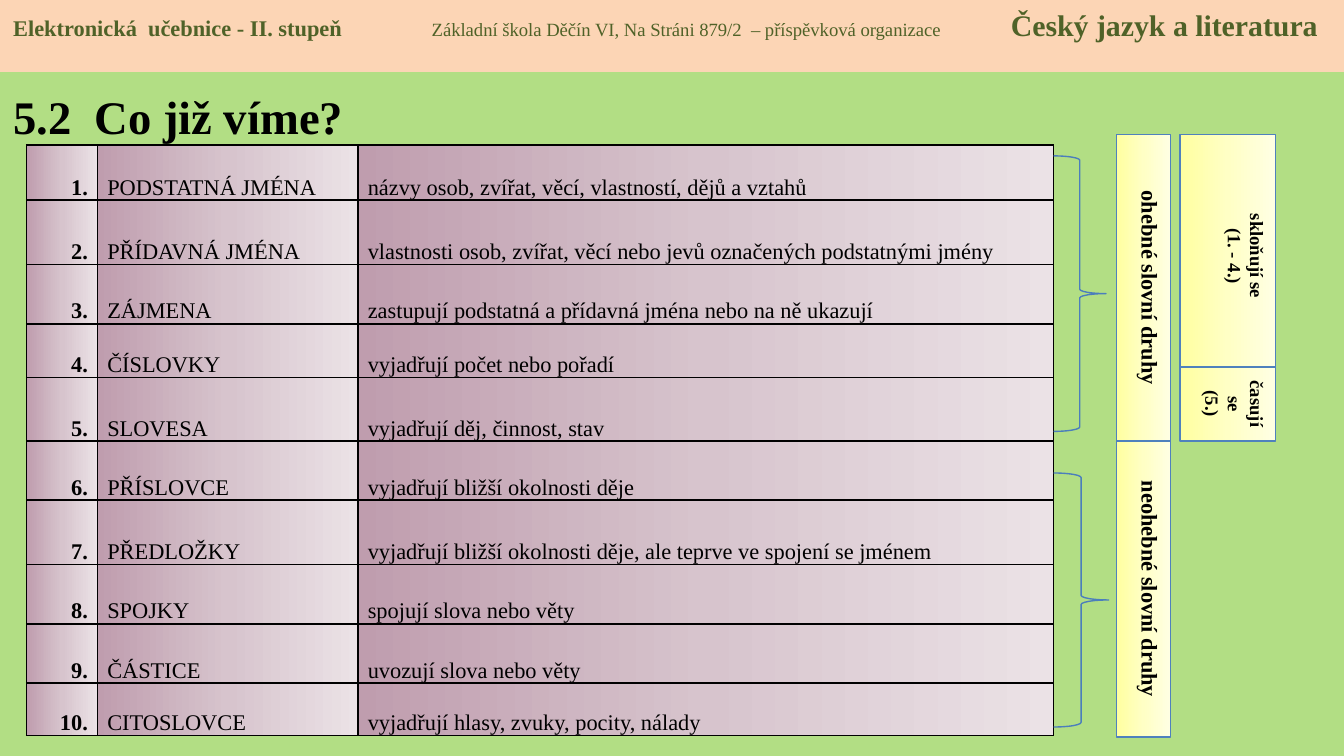
import copy

import pptx
import pptx.dml.color
import pptx.enum.shapes
import pptx.enum.text
import pptx.oxml
import pptx.oxml.ns
import pptx.util
from lxml import etree

Pt = pptx.util.Pt
PRESET = pptx.enum.shapes.MSO_SHAPE
ALIGN = pptx.enum.text.PP_ALIGN
ANCHOR = pptx.enum.text.MSO_ANCHOR
AUTO_SIZE = pptx.enum.text.MSO_AUTO_SIZE
qn = pptx.oxml.ns.qn

# Content
HEADING = "5.2  Co již víme?"
BANNER = [  # text, size, bold, start measured from the banner's text edge
    ("Elektronická  učebnice - II. stupeň", 12, True, 0),
    ("Základní škola Děčín VI, Na Stráni 879/2  – příspěvková organizace", 10, False, 224.2),
    ("Český jazyk a literatura", 16, True, 534.5),
]
WORD_CLASSES = [  # name, meaning, row height
    ("PODSTATNÁ JMÉNA", "názvy osob, zvířat, věcí, vlastností, dějů a vztahů", 29.5),
    ("PŘÍDAVNÁ JMÉNA", "vlastnosti osob, zvířat, věcí nebo jevů označených podstatnými jmény", 34.4),
    ("ZÁJMENA", "zastupují podstatná a přídavná jména nebo na ně ukazují", 31.8),
    ("ČÍSLOVKY", "vyjadřují počet nebo pořadí", 28.8),
    ("SLOVESA", "vyjadřují děj, činnost, stav", 34),
    ("PŘÍSLOVCE", "vyjadřují bližší okolnosti děje", 31.8),
    ("PŘEDLOŽKY", "vyjadřují bližší okolnosti děje, ale teprve ve spojení se jménem", 34.4),
    ("SPOJKY", "spojují slova nebo věty", 31.8),
    ("ČÁSTICE", "uvozují slova nebo věty", 31.8),
    ("CITOSLOVCE", "vyjadřují hlasy, zvuky, pocity, nálady", 28.1),
]
GROUPS = [  # text, size, left, top, width, height
    ("ohebné slovní druhy", 12, 598.3, 72, 28.8, 164.2),
    ("neohebné slovní druhy", 12, 598.3, 236.2, 28.8, 158.6),
    ("skloňují se\n(1. - 4.)", 10, 632.2, 72, 51.1, 130.3),
    ("časují se\n(5.)", 10, 632.2, 196.6, 51.1, 39.6),
]
BRACES = [(83.5, 28.1, 147.6), (253.4, 29.5, 136.1)]  # top, width, height

COLORS = {
    "page": "92D050", "banner": "FCD5B5", "banner_text": "4F6228",
    "text": "000000", "group_line": "4F81BD", "brace": "4B7EBC",
}
CELL_SHADES = ("BF9DAE", "D7C4CD", "EBE2E6")
GROUP_SHADES = ("FFFFA0", "FFFFC5", "FFFFE3")
FONT = "Times New Roman"
PAGE_W, PAGE_H = 720, 405
BANNER_H = 38.6
TABLE_LEFT, TABLE_TOP = 14.3, 77.8
COLUMNS = (38, 139.6, 372.5)
CELL_PAD = 5.2


def rgb(name):
    return pptx.dml.color.RGBColor.from_string(COLORS.get(name, name))


def style(run, size, bold=False, color="text"):
    run.font.name = FONT
    run.font.size = Pt(size)
    run.font.bold = bold
    run.font.color.rgb = rgb(color)


def shade(fill, shades):
    """Fill from left to right with three evenly spaced colours."""
    fill.gradient()
    fill.gradient_angle = 0
    first = fill.gradient_stops[0]._gs
    first.addnext(copy.deepcopy(first))
    for i, (stop, color) in enumerate(zip(fill.gradient_stops, shades)):
        stop.position = i / 2
        stop.color.rgb = rgb(color)


def add_preset(slide, preset, left, top, width, height, line=None):
    shape = slide.shapes.add_shape(preset, Pt(left), Pt(top), Pt(width), Pt(height))
    shape.shadow.inherit = False
    if line:
        shape.line.color.rgb = rgb(line)
        shape.line.width = Pt(0.75)
    else:
        shape.line.fill.background()
    return shape


def add_borders(cell):
    properties = cell._tc.get_or_add_tcPr()
    for i, side in enumerate(("lnL", "lnR", "lnT", "lnB")):
        properties.insert(i, pptx.oxml.parse_xml(
            f'<a:{side} {pptx.oxml.ns.nsdecls("a")} w="12700"><a:solidFill>'
            f'<a:srgbClr val="{COLORS["text"]}"/></a:solidFill></a:{side}>'))


def add_heading(slide):
    heading = slide.shapes.add_textbox(Pt(0), Pt(38.9), Pt(286.6), Pt(46.8))
    frame = heading.text_frame
    frame.word_wrap = True
    frame.vertical_anchor = ANCHOR.MIDDLE
    frame.text = HEADING
    style(frame.paragraphs[0].runs[0], 25, True)


def add_banner(slide):
    banner = add_preset(slide, PRESET.RECTANGLE, 0, 0, PAGE_W, BANNER_H)
    banner.fill.solid()
    banner.fill.fore_color.rgb = rgb("banner")
    frame = banner.text_frame
    frame.vertical_anchor = ANCHOR.TOP
    paragraph = frame.paragraphs[0]
    paragraph.alignment = ALIGN.LEFT
    tabs = etree.SubElement(paragraph._p.get_or_add_pPr(), qn("a:tabLst"))
    for text, size, bold, start in BANNER:
        if start:
            etree.SubElement(tabs, qn("a:tab"), pos=str(int(Pt(start))), algn="l")
        run = paragraph.add_run()
        run.text = "\t" + text if start else text
        style(run, size, bold, "banner_text")


def add_word_classes(slide):
    heights = [height for _, _, height in WORD_CLASSES]
    table = slide.shapes.add_table(
        len(WORD_CLASSES), len(COLUMNS), Pt(TABLE_LEFT), Pt(TABLE_TOP),
        Pt(sum(COLUMNS)), Pt(sum(heights))).table
    table.first_row = table.horz_banding = False
    for column, width in zip(table.columns, COLUMNS):
        column.width = Pt(width)
    for r, (name, meaning, height) in enumerate(WORD_CLASSES):
        table.rows[r].height = Pt(height)
        for c, text in enumerate((f"{r + 1}.", name, meaning)):
            cell = table.cell(r, c)
            cell.margin_left = cell.margin_right = Pt(CELL_PAD)
            cell.margin_top = cell.margin_bottom = 0
            cell.vertical_anchor = ANCHOR.BOTTOM
            cell.text_frame.text = text
            paragraph = cell.text_frame.paragraphs[0]
            paragraph.alignment = ALIGN.RIGHT if c == 0 else ALIGN.LEFT
            paragraph.line_spacing = 1.15
            paragraph.space_after = Pt(10)
            style(paragraph.runs[0], 12, c == 0)
            shade(cell.fill, CELL_SHADES)
            add_borders(cell)


def add_braces(slide):
    for top, width, height in BRACES:
        brace = add_preset(slide, PRESET.RIGHT_BRACE, TABLE_LEFT + sum(COLUMNS),
                           top, width, height, "brace")
        brace.fill.background()


def add_groups(slide):
    for text, size, *place in GROUPS:
        group = add_preset(slide, PRESET.RECTANGLE, *place, line="group_line")
        shade(group.fill, GROUP_SHADES)
        frame = group.text_frame
        frame.text = text
        frame.vertical_anchor = ANCHOR.TOP
        frame.auto_size = AUTO_SIZE.SHAPE_TO_FIT_TEXT
        frame._txBody.bodyPr.set("vert", "vert")
        for paragraph in frame.paragraphs:
            paragraph.alignment = ALIGN.CENTER
            style(paragraph.runs[0], size, True)


def main():
    deck = pptx.Presentation()
    deck.slide_width, deck.slide_height = Pt(PAGE_W), Pt(PAGE_H)
    slide = deck.slides.add_slide(deck.slide_layouts[6])

    # Page colour at 70 % opacity
    page = slide.background.fill
    page.solid()
    page.fore_color.rgb = rgb("page")
    page_color = slide._element.find(".//" + qn("a:srgbClr"))
    etree.SubElement(page_color, qn("a:alpha"), val="70000")

    add_heading(slide)
    add_banner(slide)
    add_word_classes(slide)
    add_braces(slide)
    add_groups(slide)
    deck.save("out.pptx")


if __name__ == "__main__":
    main()
